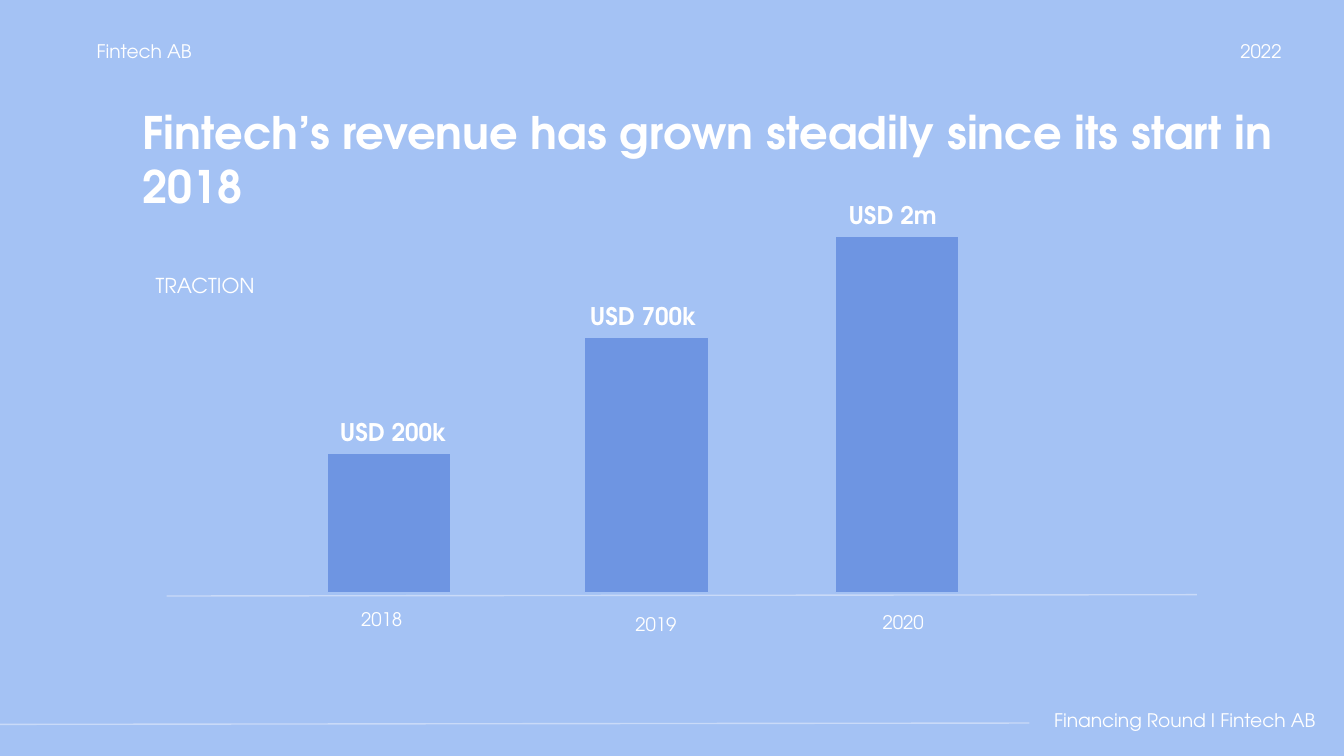
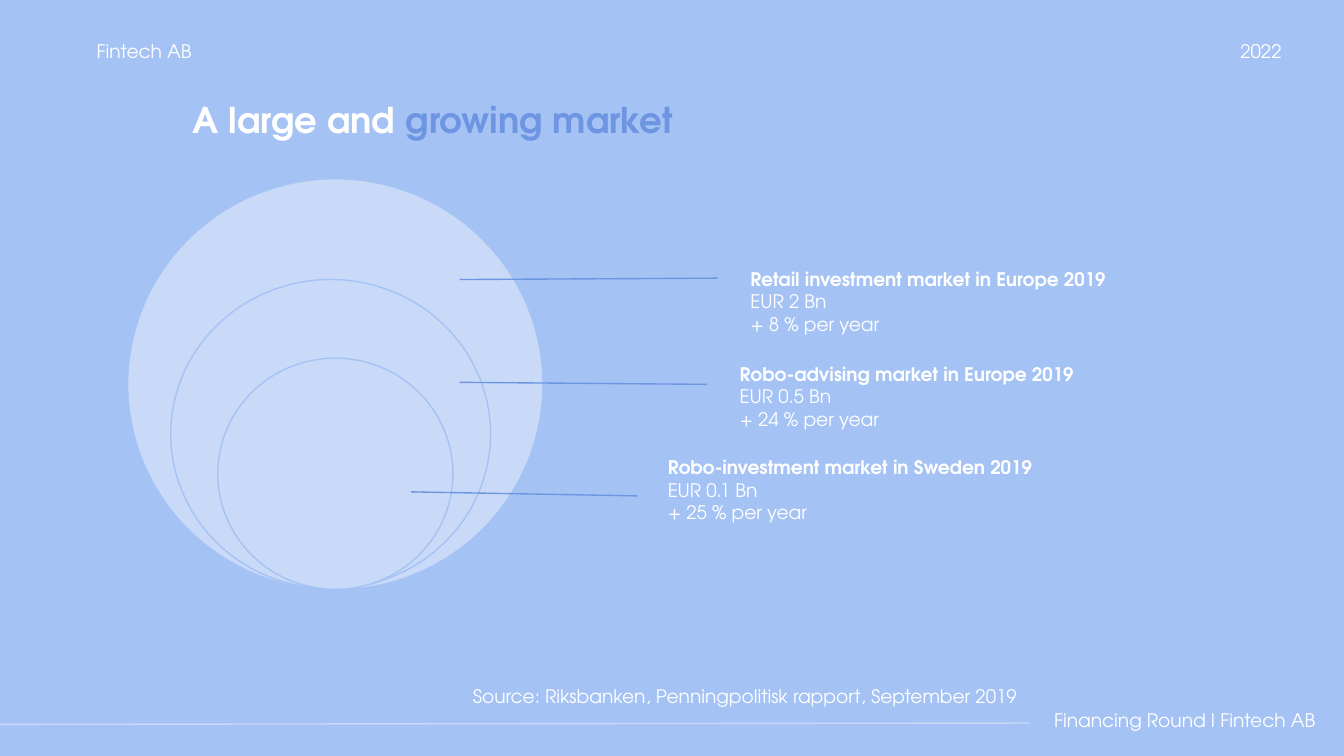
from dataclasses import dataclass

from lxml import etree
from pptx import Presentation
from pptx.dml.color import RGBColor
from pptx.enum.shapes import MSO_CONNECTOR, MSO_SHAPE
from pptx.enum.text import PP_ALIGN
from pptx.oxml.ns import qn
from pptx.util import Pt

RECTANGLE = MSO_SHAPE.RECTANGLE
ELLIPSE = MSO_SHAPE.OVAL
STRAIGHT = MSO_CONNECTOR.STRAIGHT
LEFT = PP_ALIGN.LEFT
CENTER = PP_ALIGN.CENTER

SCALE = 4572  # EMU per px, 200 px to the inch
PAGE_WIDTH, PAGE_HEIGHT = 2000, 1125
INSET = 20
LINE_WIDTH = Pt(0.75)
FONT = "TeX Gyre Adventor"
BODY_SIZE = 10
COLORS = {
    "sky": "A4C2F4",
    "pale": "C9DAF8",
    "accent": "6E95E2",
    "white": "FFFFFF",
}


@dataclass(frozen=True)
class Box:
    left: int
    top: int
    width: int
    height: int


@dataclass(frozen=True)
class Span:
    text: str
    color: str = "white"


@dataclass(frozen=True)
class Line:
    spans: tuple[Span, ...]
    size: int = BODY_SIZE
    bold: bool = False
    align: PP_ALIGN = LEFT


@dataclass(frozen=True)
class Stroke:
    x1: int
    y1: int
    x2: int
    y2: int
    color: str = "pale"


@dataclass(frozen=True)
class Bar:
    left: int
    height: int
    value: str
    value_left: int
    year: str
    year_left: int
    year_top: int


@dataclass(frozen=True)
class Market:
    circle: Box
    leader: Stroke
    text_left: int
    text_top: int
    name: str
    volume: str
    growth: str


# Bars stand on one base and have one width
LABEL_WIDTH = 656
BAR_WIDTH = 184
BAR_BASE = 882
VALUE_RISE = 74
BARS = (
    Bar(487, 207, "USD 200k", 486, "2018", 240, 888),
    Bar(870, 380, "USD 700k", 858, "2019", 648, 896),
    Bar(1243, 530, "USD 2m", 1243, "2020", 1016, 893),
)

# Markets run from the outermost circle to the innermost
MARKETS = (
    Market(Box(190, 266, 618, 612), Stroke(684, 416, 1068, 414, "accent"), 1097, 378,
           "Retail investment market in Europe 2019", "EUR 2 Bn", "+ 8 % per year"),
    Market(Box(254, 416, 476, 460), Stroke(684, 569, 1052, 572, "accent"), 1081, 520,
           "Robo-advising market in Europe 2019", "EUR 0.5 Bn", "+ 24 % per year"),
    Market(Box(324, 533, 350, 344), Stroke(612, 732, 948, 738, "accent"), 974, 659,
           "Robo-investment market in Sweden 2019", "EUR 0.1 Bn", "+ 25 % per year"),
)


def px(length: int) -> int:
    return length * SCALE


def rgb(name: str) -> RGBColor:
    return RGBColor.from_string(COLORS[name])


def line_of(text: str, size: int = BODY_SIZE, bold: bool = False,
            align: PP_ALIGN = LEFT) -> Line:
    return Line((Span(text),), size, bold, align)


def add_text(page, box: Box, *lines: Line) -> None:
    shape = page.shapes.add_textbox(px(box.left), px(box.top), px(box.width), px(box.height))
    frame = shape.text_frame
    frame.word_wrap = True
    frame.margin_left = frame.margin_right = px(INSET)
    frame.margin_top = frame.margin_bottom = px(INSET)
    for index, line in enumerate(lines):
        para = frame.add_paragraph() if index else frame.paragraphs[0]
        para.alignment = line.align
        para.font.name = FONT
        para.font.size = Pt(line.size)
        para.font.bold = line.bold
        for span in line.spans:
            run = para.add_run()
            run.text = span.text
            run.font.color.rgb = rgb(span.color)


def add_shape(page, preset: MSO_SHAPE, box: Box, fill: str) -> None:
    shape = page.shapes.add_shape(
        preset, px(box.left), px(box.top), px(box.width), px(box.height))
    shape.shadow.inherit = False
    shape.fill.solid()
    shape.fill.fore_color.rgb = rgb(fill)
    shape.line.color.rgb = rgb("sky")
    shape.line.width = LINE_WIDTH


def add_stroke(page, stroke: Stroke) -> None:
    connector = page.shapes.add_connector(
        STRAIGHT, px(stroke.x1), px(stroke.y1), px(stroke.x2), px(stroke.y2))
    connector.line.color.rgb = rgb(stroke.color)
    connector.line.width = LINE_WIDTH
    etree.SubElement(connector._element.spPr, qn("a:effectLst"))


def add_page(deck, title_box: Box, title: Line):
    """Blank page with background, header, footer and title."""
    page = deck.slides.add_slide(deck.slide_layouts[6])
    page.background.fill.solid()
    page.background.fill.fore_color.rgb = rgb("sky")
    add_text(page, Box(0, 42, 429, 68), line_of("Fintech AB", align=CENTER))
    add_text(page, Box(1753, 42, 247, 68), line_of("2022", align=CENTER))
    add_stroke(page, Stroke(0, 1078, 1532, 1076))
    add_text(page, Box(1549, 1038, 451, 68), line_of("Financing Round I Fintech AB"))
    add_text(page, title_box, title)
    return page


def build_traction(deck) -> None:
    title = line_of("Fintech’s revenue has grown steadily since its start in 2018", 24, True)
    page = add_page(deck, Box(192, 136, 1808, 216), title)
    add_text(page, Box(212, 388, 256, 72), line_of("TRACTION", 11))

    # Bars with values above and years below
    for bar in BARS:
        top = BAR_BASE - bar.height
        add_shape(page, RECTANGLE, Box(bar.left, top, BAR_WIDTH, bar.height), "accent")
        add_text(page, Box(bar.value_left, top - VALUE_RISE, LABEL_WIDTH, 96),
                 line_of(bar.value, 13, True))
        add_text(page, Box(bar.year_left, bar.year_top, LABEL_WIDTH, 86),
                 line_of(bar.year, align=CENTER))

    # Axis
    add_stroke(page, Stroke(248, 887, 1781, 885))


def build_market(deck) -> None:
    title = Line((Span("A large and "), Span("growing market", "accent")), 19, True)
    page = add_page(deck, Box(267, 126, 1733, 68), title)

    # Nested circles, then the leaders and texts on top of them
    for market in MARKETS:
        add_shape(page, ELLIPSE, market.circle, "pale")
    for market in MARKETS:
        add_stroke(page, market.leader)
        add_text(page, Box(market.text_left, market.text_top, LABEL_WIDTH, 176),
                 line_of(market.name, bold=True),
                 line_of(market.volume), line_of(market.growth))

    # Source
    add_text(page, Box(684, 1003, 884, 74),
             line_of("Source: Riksbanken, Penningpolitisk rapport, September 2019"))


def main() -> None:
    deck = Presentation()
    deck.slide_width = px(PAGE_WIDTH)
    deck.slide_height = px(PAGE_HEIGHT)
    build_traction(deck)
    build_market(deck)
    deck.save("out.pptx")


if __name__ == "__main__":
    main()
